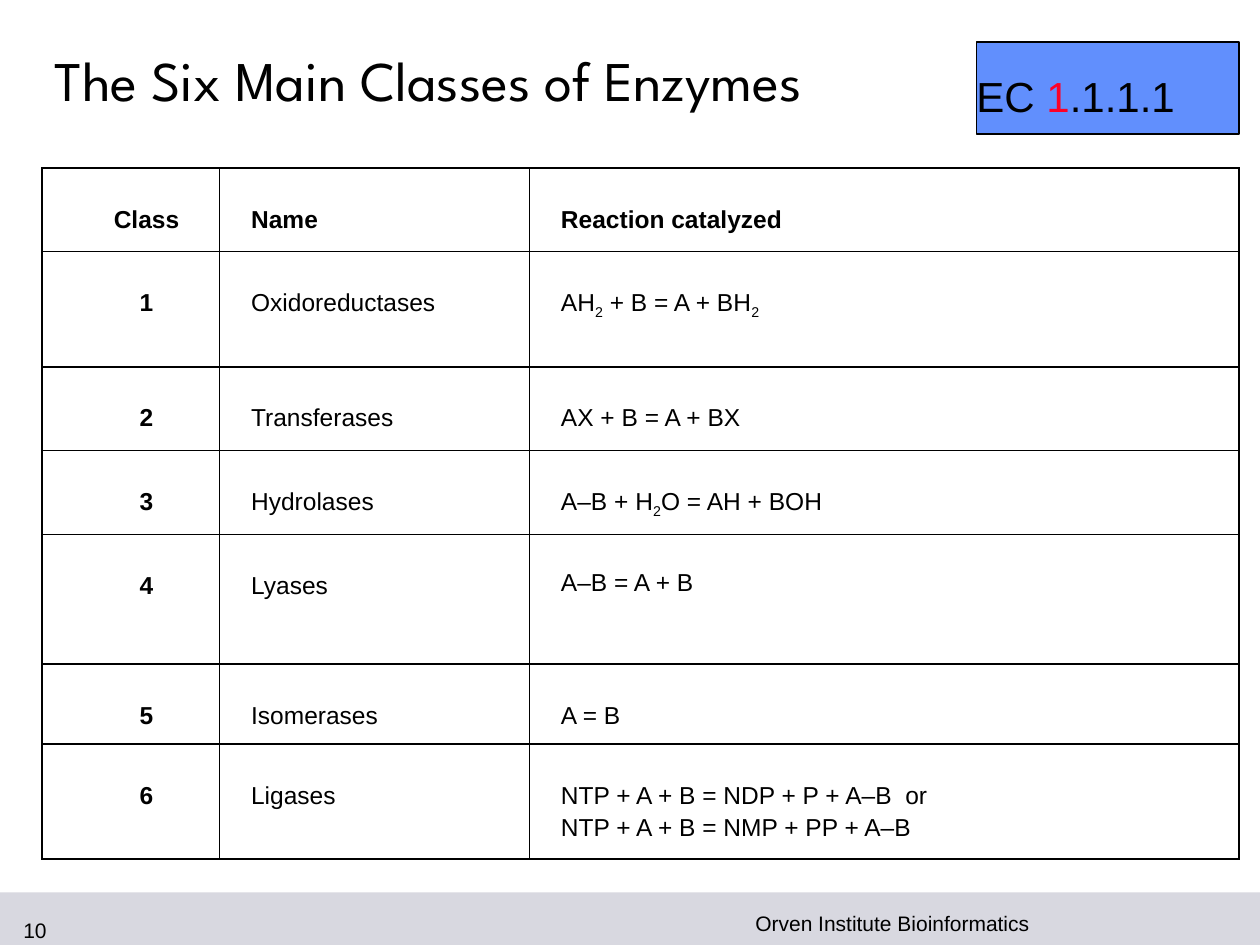
import pptx
import pptx.util
import pptx.dml.color
import pptx.enum.shapes
import pptx.enum.text
import pptx.oxml
import pptx.oxml.ns

Pt = pptx.util.Pt
ALIGN = pptx.enum.text.PP_ALIGN
ANCHOR = pptx.enum.text.MSO_ANCHOR
RECT = pptx.enum.shapes.MSO_SHAPE.RECTANGLE


def rgb(value):
    return pptx.dml.color.RGBColor.from_string(value)


def add_text(p, text, size=14, font="Arial", color="000000", bold=False, align=ALIGN.LEFT):
    """Add text to a paragraph; parts between underscores become subscripts."""
    p.alignment = align
    for i, part in enumerate(text.split("_")):
        if part:
            r = p.add_run()
            r.text = part
            r.font.size = Pt(size)
            r.font.name = font
            r.font.bold = bold
            r.font.color.rgb = rgb(color)
            if i % 2:
                r.font._element.set("baseline", "-25000")


prs = pptx.Presentation()
prs.slide_width, prs.slide_height = Pt(720), Pt(540)
s = prs.slides.add_slide(prs.slide_layouts[5])

# Footer band, slide number and footer text
band = s.shapes.add_shape(RECT, Pt(0), Pt(510), Pt(720), Pt(30))
band.shadow.inherit = False
band.fill.solid()
band.fill.fore_color.rgb = rgb("D8D8E0")
band.line.fill.background()
for text, left, top, width in [("10", 2, 520.5, 36),
                               ("Orven Institute Bioinformatics", 402, 516.5, 216)]:
    sp = s.shapes.add_textbox(Pt(left), Pt(top), Pt(width), Pt(21.6))
    sp.text_frame.word_wrap = True
    add_text(sp.text_frame.paragraphs[0], text, size=12, align=ALIGN.CENTER)

# Title
title = s.shapes.title
title.left, title.top, title.width, title.height = Pt(24), Pt(0), Pt(606), Pt(90)
title.text_frame.vertical_anchor = ANCHOR.MIDDLE
add_text(title.text_frame.paragraphs[0], "The Six Main Classes of Enzymes",
         size=32, font="League Spartan")

# Table of enzyme classes
rows = [
    ("Class", "Name", "Reaction catalyzed"),
    ("1", "Oxidoreductases", "AH_2_ + B = A + BH_2_"),
    ("2", "Transferases", "AX + B = A + BX"),
    ("3", "Hydrolases", "A–B + H_2_O = AH + BOH"),
    ("4", "Lyases", "A–B = A + B"),
    ("5", "Isomerases", "A = B"),
    ("6", "Ligases", "NTP + A + B = NDP + P + A–B  or\nNTP + A + B = NMP + PP + A–B"),
]
col_widths = [101.5, 177.1, 405.4]
row_heights = [47.8, 65.8, 47.8, 47.8, 74.2, 45.4, 65.7]
table = s.shapes.add_table(len(rows), len(col_widths), Pt(24), Pt(96),
                           Pt(sum(col_widths)), Pt(sum(row_heights))).table
table.first_row = table.horz_banding = False
for col, width in zip(table.columns, col_widths):
    col.width = Pt(width)
for row, height in zip(table.rows, row_heights):
    row.height = Pt(height)

for i, row in enumerate(rows):
    for j, text in enumerate(row):
        cell = table.cell(i, j)
        cell.margin_left, cell.margin_top = Pt(18), Pt(21.6)
        cell.margin_right, cell.margin_bottom = Pt(0), Pt(7.2)
        tcPr = cell._tc.get_or_add_tcPr()
        for side in "LRTB":
            tcPr.append(pptx.oxml.parse_xml(
                f'<a:ln{side} {pptx.oxml.ns.nsdecls("a")} w="{Pt(1)}"><a:solidFill>'
                f'<a:srgbClr val="000000"/></a:solidFill></a:ln{side}>'))
        cell.fill.solid()
        cell.fill.fore_color.rgb = rgb("FFFFFF")
        tf = cell.text_frame
        for k, line in enumerate(text.split("\n")):
            p = tf.add_paragraph() if k else tf.paragraphs[0]
            if k:
                p.space_before = Pt(3)
            add_text(p, line, bold=i == 0 or j == 0,
                     align=ALIGN.LEFT if j else ALIGN.CENTER)
table.cell(4, 2).text_frame.paragraphs[0].line_spacing = 0.9

# EC number box
ec = s.shapes.add_shape(RECT, Pt(558), Pt(24), Pt(150), Pt(52.6))
ec.shadow.inherit = False
ec.fill.solid()
ec.fill.fore_color.rgb = rgb("618FFD")
ec.line.color.rgb = rgb("000000")
ec.line.width = Pt(1)
tf = ec.text_frame
tf.margin_left = tf.margin_right = Pt(0)
tf.margin_top, tf.margin_bottom = Pt(21.6), Pt(7.2)
tf.vertical_anchor = ANCHOR.MIDDLE
p = tf.paragraphs[0]
p.line_spacing = 0.8
for text, color in [("EC", "000000"), (" 1", "FC0128"), (".1.1.1", "000000")]:
    add_text(p, text, size=24, color=color)

prs.save("out.pptx")
